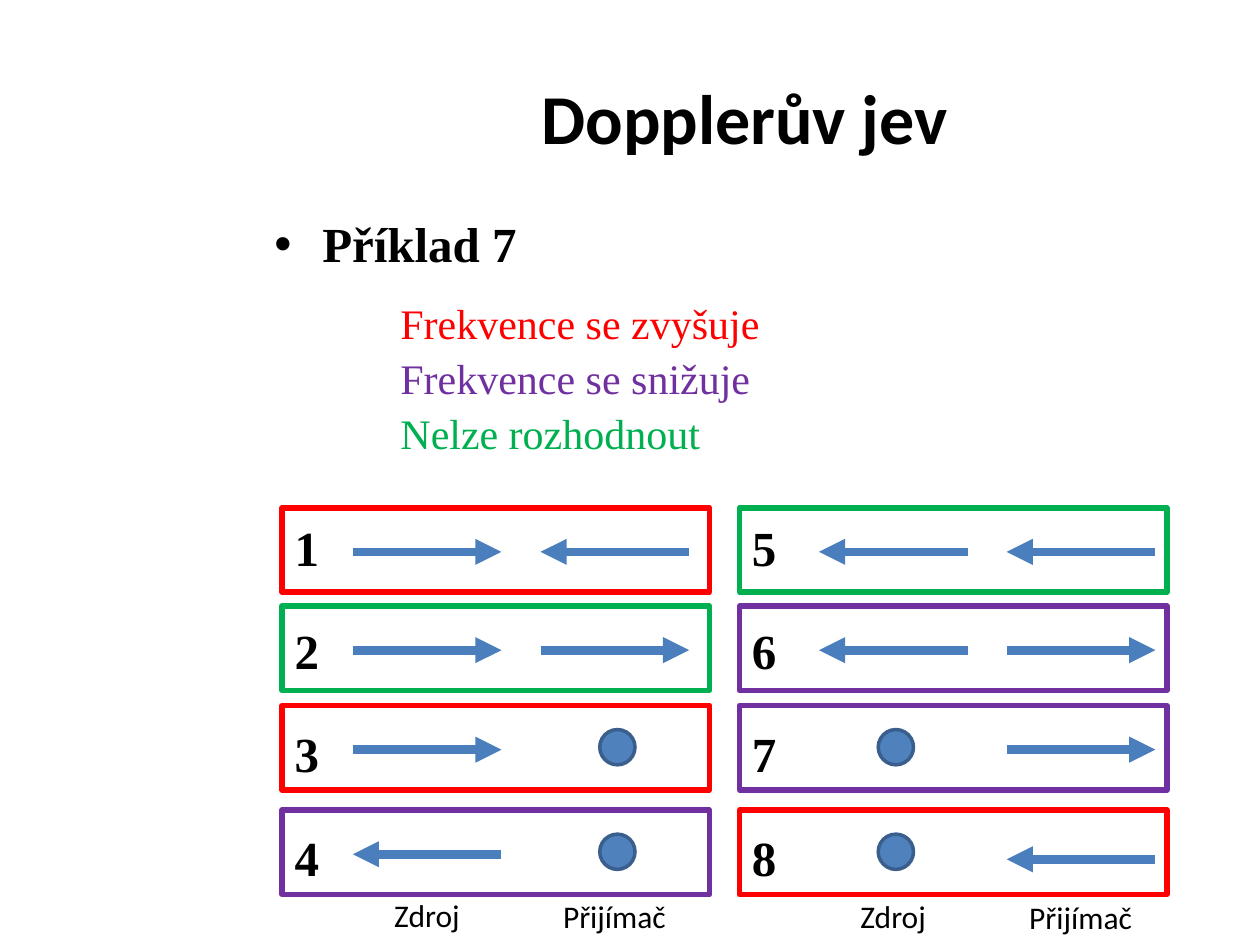
from dataclasses import dataclass

from lxml import etree
from pptx import Presentation, util as u
from pptx.dml.color import RGBColor
from pptx.enum import shapes, text
from pptx.oxml.ns import qn


@dataclass(frozen=True)
class Theme:
    head: str = "Calibri"
    body: str = "Times New Roman"
    black: str = "000000"
    red: str = "FF0000"
    green: str = "00B050"
    violet: str = "7030A0"
    arrow: str = "4B7EBC"
    dot: str = "4F81BD"
    rim: str = "3A5F8C"
    title: int = 40
    lead: int = 28
    item: int = 24
    label: int = 18


class Page:
    def __init__(self, deck, theme):
        self.theme = theme
        self.slide = deck.slides.add_slide(deck.slide_layouts[6])

    def label(self, box, lines, font, size, color=None, bold=False,
              wrap=False, gap=0, align=None, anchor=None):
        """Add a text box with one paragraph per line."""
        area = self.slide.shapes.add_textbox(*map(u.Inches, box))
        frame = area.text_frame
        frame.word_wrap = wrap
        frame.vertical_anchor = anchor
        for i, line in enumerate(lines):
            par = frame.paragraphs[0] if i == 0 else frame.add_paragraph()
            par.text = line
            par.alignment = align
            if i and gap:
                par.space_before = u.Pt(gap)
            self.style(par, font, size, color or self.theme.black, bold)
        return frame

    def style(self, par, font, size, color, bold=False):
        par.font.name, par.font.size, par.font.bold = font, u.Pt(size), bold
        par.font.color.rgb = RGBColor.from_string(color)

    def indent(self, par, left, first=0, bullet=None):
        props = par._p.get_or_add_pPr()
        props.set("marL", str(u.Inches(left)))
        props.set("indent", str(u.Inches(first)))
        if bullet:
            # Bullet elements come before the paragraph's font element
            font = props.find(qn("a:defRPr"))
            for tag, key, value in (("a:buFont", "typeface", "Arial"),
                                    ("a:buChar", "char", bullet)):
                mark = etree.SubElement(props, qn(tag))
                mark.set(key, value)
                if font is not None:
                    font.addprevious(mark)

    def shape(self, kind, box, line, width, fill=None):
        item = self.slide.shapes.add_shape(kind, *map(u.Inches, box))
        item.shadow.inherit = False
        if fill:
            item.fill.solid()
            item.fill.fore_color.rgb = RGBColor.from_string(fill)
        else:
            item.fill.background()
        item.line.color.rgb = RGBColor.from_string(line)
        item.line.width = u.Pt(width)

    def arrow(self, x, y, span, end):
        line = self.slide.shapes.add_connector(
            shapes.MSO_CONNECTOR.STRAIGHT,
            *map(u.Inches, (x, y, x + span, y)))
        line.line.color.rgb = RGBColor.from_string(self.theme.arrow)
        line.line.width = u.Pt(5)
        props = line._element.spPr
        etree.SubElement(props.find(qn("a:ln")), qn(end), type="triangle")
        etree.SubElement(props, qn("a:effectLst"))

    def move(self, sign, x, y):
        """Draw a motion mark: > right, < left, o at rest."""
        if sign == "o":
            self.shape(shapes.MSO_SHAPE.OVAL, (x + 0.47, y - 0.16, 0.28, 0.28),
                       self.theme.rim, 2, self.theme.dot)
        else:
            self.arrow(x, y, 1.18, "a:tailEnd" if sign == ">" else "a:headEnd")


def main():
    deck = Presentation()
    deck.slide_width, deck.slide_height = u.Inches(10), u.Inches(7.5)
    th = Theme()
    page = Page(deck, th)

    # Title
    page.label((2.08, 0.3, 7.66, 1.25), ["Dopplerův jev"], th.head, th.title,
               bold=True, wrap=True, align=text.PP_ALIGN.CENTER,
               anchor=text.MSO_ANCHOR.MIDDLE)

    # Task and colour key
    keys = [("Frekvence se zvyšuje", th.red),
            ("Frekvence se snižuje", th.violet),
            ("Nelze rozhodnout", th.green)]
    frame = page.label((2.08, 1.7, 7.67, 2.1),
                       ["Příklad 7"] + [key for key, _ in keys],
                       th.body, th.item, wrap=True, gap=5.6)
    lead, *rest = frame.paragraphs
    lead.line_spacing = 0.9
    page.indent(lead, 0.38, -0.38, "•")
    page.style(lead, th.body, th.lead, th.black, True)
    for par, (_, color) in zip(rest, keys):
        par.line_spacing = 0.9
        page.indent(par, 1)
        page.style(par, th.body, th.item, color)
    rest[0].space_before = u.Pt(17)

    # Cases: source and receiver motion, framed in the answer's colour
    rows = (4.03, 4.81, 5.6, 6.43)
    sides = [
        (2.24, (2.8, 4.29), 7.06,
         [("><", th.red), (">>", th.green), (">o", th.red), ("<o", th.violet)]),
        (5.87, (6.5, 7.99), 7.07,
         [("<<", th.green), ("<>", th.violet), ("o>", th.violet),
          ("o<", th.red)]),
    ]
    for side, (left, slots, base, cases) in enumerate(sides):
        for top, (signs, color) in zip(rows, cases):
            page.shape(shapes.MSO_SHAPE.RECTANGLE, (left, top, 3.39, 0.67),
                       color, 3.25)
            for sign, x in zip(signs, slots):
                low = 0.04 if signs == "o<" and sign == "<" else 0
                page.move(sign, x, top + 0.35 + low)
        page.label((left, 4.06, 0.4, 3),
                   [str(4 * side + n) for n in range(1, 5)],
                   th.body, th.lead, bold=True, gap=25.3)

        # Column labels
        page.label((slots[0] + 0.23, base, 0.73, 0.4), ["Zdroj"],
                   th.head, th.label)
        page.label((slots[1] + 0.08, base + 0.01, 1.02, 0.4), ["Přijímač"],
                   th.head, th.label)

    deck.save("out.pptx")


if __name__ == "__main__":
    main()
